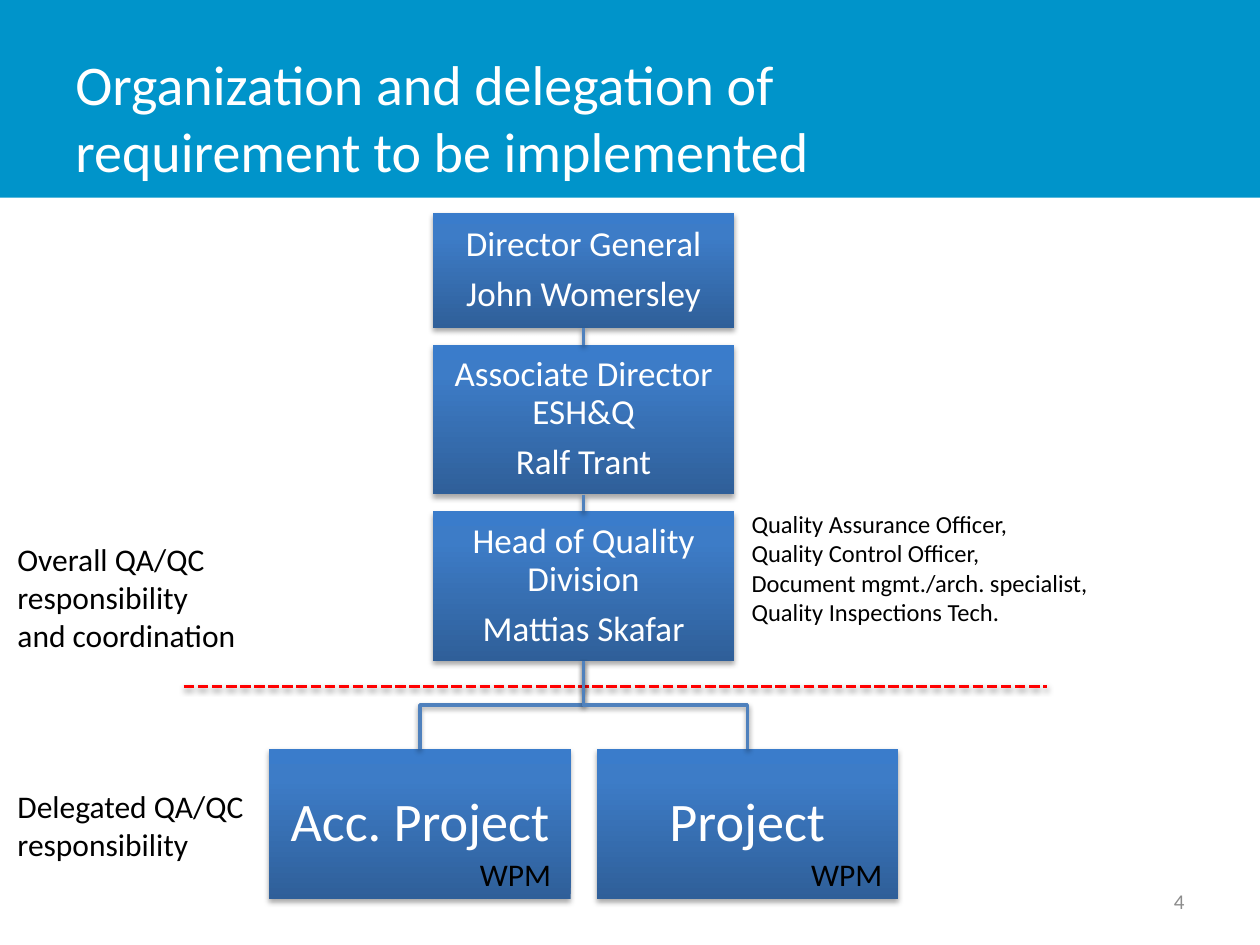
import pptx
import pptx.dml.color
import pptx.enum.dml
import pptx.enum.shapes
import pptx.enum.text
import pptx.oxml
import pptx.oxml.ns
import pptx.util

Pt = pptx.util.Pt
ALIGN = pptx.enum.text.PP_ALIGN
ANCHOR = pptx.enum.text.MSO_ANCHOR
CONNECTOR = pptx.enum.shapes.MSO_CONNECTOR
RECTANGLE = pptx.enum.shapes.MSO_SHAPE.RECTANGLE

FONT = "Calibri"
WHITE, BLACK, GREY = "FFFFFF", "000000", "8C8C8C"
BANNER, LINK, BOUNDARY = "0094CA", "4F81BD", "FF0000"
BOX_GRADIENT = [(0, "2F5F99"), (80, "3D7CC7"), (100, "3A7CCB")]
BOX_WIDTH = 172.3


def color(hex_text):
    return pptx.dml.color.RGBColor.from_string(hex_text)


def add_shadow(shape, opacity, distance):
    shape._element.spPr.append(pptx.oxml.parse_xml(
        f'<a:effectLst {pptx.oxml.ns.nsdecls("a")}>'
        f'<a:outerShdw blurRad="{Pt(3.1)}" dist="{Pt(distance)}" dir="5400000" rotWithShape="0">'
        f'<a:srgbClr val="000000"><a:alpha val="{opacity * 1000}"/></a:srgbClr>'
        '</a:outerShdw></a:effectLst>'))


def fill_gradient(shape, stops):
    shape.fill.background()
    properties = shape._element.spPr
    stop_xml = "".join(f'<a:gs pos="{position * 1000}"><a:srgbClr val="{value}"/></a:gs>'
                       for position, value in stops)
    gradient = pptx.oxml.parse_xml(
        f'<a:gradFill {pptx.oxml.ns.nsdecls("a")} rotWithShape="1"><a:gsLst>{stop_xml}</a:gsLst>'
        '<a:lin ang="16200000" scaled="0"/></a:gradFill>')
    properties.replace(properties.find(pptx.oxml.ns.qn("a:noFill")), gradient)


def write_lines(frame, lines, size, hex_text, align=ALIGN.LEFT):
    frame.word_wrap = True
    for index, line in enumerate(lines):
        paragraph = frame.paragraphs[0] if index == 0 else frame.add_paragraph()
        paragraph.alignment = align
        run = paragraph.add_run()
        run.text = line
        run.font.name = FONT
        run.font.size = Pt(size)
        run.font.color.rgb = color(hex_text)


def add_text(slide, box, lines, size, hex_text=BLACK, align=ALIGN.LEFT, anchor=ANCHOR.TOP):
    frame = slide.shapes.add_textbox(*map(Pt, box)).text_frame
    frame.vertical_anchor = anchor
    write_lines(frame, lines, size, hex_text, align)


def add_banner(slide, box, title):
    left, top, width, height = box
    banner = slide.shapes.add_shape(RECTANGLE, *map(Pt, box))
    banner.shadow.inherit = False
    banner.fill.solid()
    banner.fill.fore_color.rgb = color(BANNER)
    banner.line.fill.background()
    add_text(slide, (left + 36, top + 21.6, 562.3, height - 23), [title], 32, WHITE,
             anchor=ANCHOR.MIDDLE)


def add_role(slide, box, lines, size):
    role = slide.shapes.add_shape(RECTANGLE, *map(Pt, box))
    fill_gradient(role, BOX_GRADIENT)
    role.line.fill.background()
    add_shadow(role, 35, 1.8)
    frame = role.text_frame
    frame.vertical_anchor = ANCHOR.MIDDLE
    frame.margin_left = frame.margin_right = frame.margin_top = frame.margin_bottom = Pt(1.4)
    write_lines(frame, lines, size, WHITE, ALIGN.CENTER)
    for paragraph in frame.paragraphs:
        paragraph.line_spacing = 0.9
        paragraph.space_after = Pt(size * 0.35)


def add_line(slide, kind, start, end, hex_text):
    line = slide.shapes.add_connector(kind, *map(Pt, (*start, *end)))
    line.line.color.rgb = color(hex_text)
    line.line.width = Pt(2)
    add_shadow(line, 38, 1.6)
    return line


def add_branch(slide, start, end):
    """Elbow that leaves downwards: a level elbow turned by a quarter about its centre."""
    center_x, center_y = (start[0] + end[0]) / 2, (start[1] + end[1]) / 2
    half_drop, half_reach = (end[1] - start[1]) / 2, (start[0] - end[0]) / 2
    branch = add_line(slide, CONNECTOR.ELBOW,
                      (center_x - half_drop, center_y - half_reach),
                      (center_x + half_drop, center_y + half_reach), LINK)
    branch._element.spPr.find(pptx.oxml.ns.qn("a:xfrm")).set("rot", "5400000")


def add_organization(slide, box):
    left, top, width, height = box
    center = left + width / 2
    project_height = 85.7
    project_top = top + height - project_height

    # Delegated projects at both sides of the box
    project_lefts = (left, left + width - BOX_WIDTH)
    for project_left, name in zip(project_lefts, ("Acc. Project", "Project")):
        add_role(slide, (project_left, project_top, BOX_WIDTH, project_height), [name], 31)

    # Chain of command with equal gaps
    gap = 9.6
    chain = [
        (65.6, ["Director General", "John Womersley"]),
        (project_height, ["Associate Director ESH&Q", "Ralf Trant"]),
        (project_height, ["Head of Quality Division", "Mattias Skafar"]),
    ]
    role_top = top
    for index, (role_height, lines) in enumerate(chain):
        add_role(slide, (center - BOX_WIDTH / 2, role_top, BOX_WIDTH, role_height), lines, 20)
        if index:
            add_line(slide, CONNECTOR.STRAIGHT, (center, role_top - gap), (center, role_top), LINK)
        role_top += role_height + gap
    chain_bottom = role_top - gap

    # Boundary between overall and delegated responsibility
    boundary = add_line(slide, CONNECTOR.STRAIGHT, (105, 392.4), (598.3, 392.4), BOUNDARY)
    boundary.line.dash_style = pptx.enum.dml.MSO_LINE.SQUARE_DOT

    # Branches to the projects, and their work package managers
    for project_left, label_left in zip(project_lefts, (267.1, 456.5)):
        add_branch(slide, (center, chain_bottom), (project_left + BOX_WIDTH / 2, project_top))
        add_text(slide, (label_left, project_top + 57.4, 62.6, 29), ["WPM"], 18)


def add_notes_beside_chart(slide, left, right):
    add_text(slide, (left, 305.3, 164, 73),
             ["Overall QA/QC", "responsibility", "and coordination"], 18)
    add_text(slide, (left, 446, 148, 51), ["Delegated QA/QC", "responsibility"], 18)
    add_text(slide, (right, 287.3, 290, 75),
             ["Quality Assurance Officer,", "Quality Control Officer,",
              "Document mgmt./arch. specialist,", "Quality Inspections Tech."], 14)


def main():
    presentation = pptx.Presentation()
    presentation.slide_width, presentation.slide_height = Pt(720), Pt(540)
    slide = presentation.slides.add_slide(presentation.slide_layouts[6])
    add_banner(slide, (0, 0, 720, 113),
               "Organization and delegation of requirement to be implemented")
    add_notes_beside_chart(slide, 2.9, 422.4)
    add_organization(slide, (153.8, 121.7, 359.4, 391.9))
    # Slide number
    add_text(slide, (516, 500.5, 168, 28.8), ["4"], 12, GREY, ALIGN.RIGHT, ANCHOR.MIDDLE)
    presentation.save("out.pptx")


if __name__ == "__main__":
    main()
